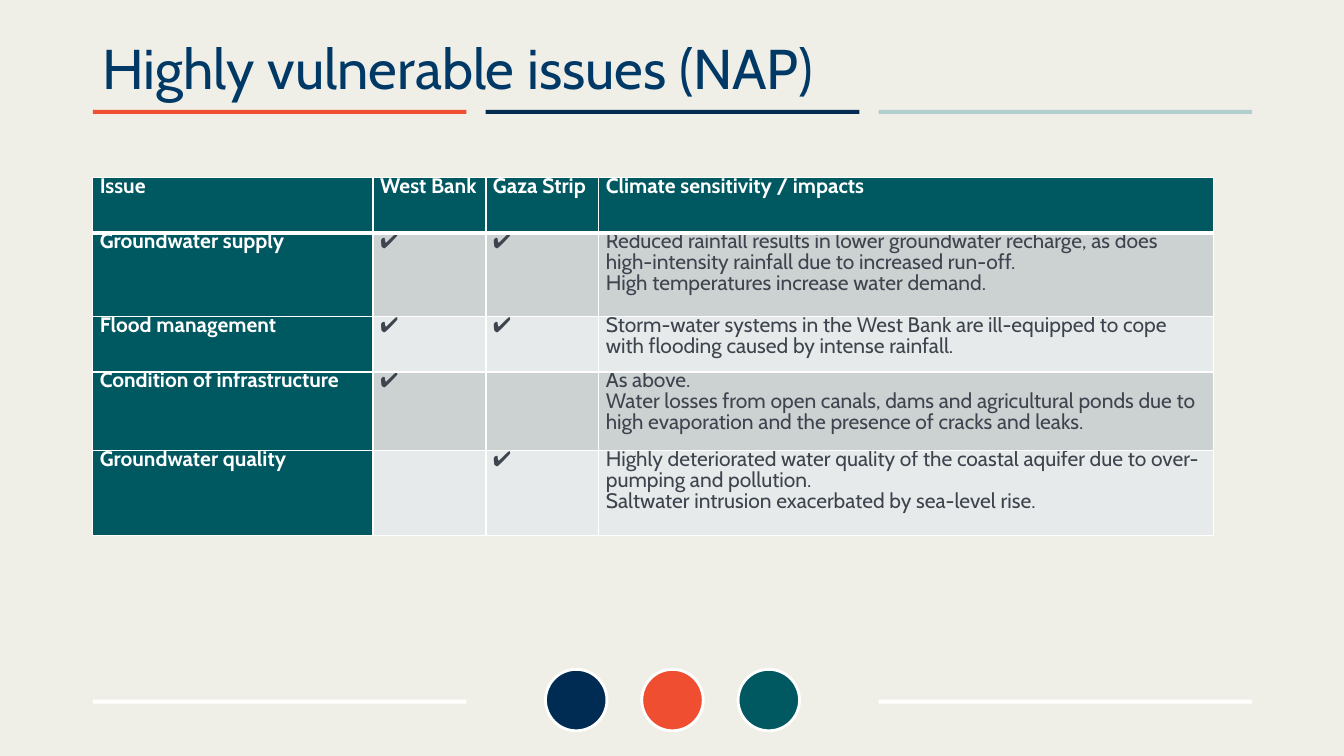
from lxml import etree
from pptx import Presentation
from pptx.dml.color import RGBColor
from pptx.enum.shapes import MSO_SHAPE
from pptx.enum.text import MSO_ANCHOR
from pptx.oxml.ns import qn
from pptx.util import Inches, Pt

RECTANGLE, OVAL = MSO_SHAPE.RECTANGLE, MSO_SHAPE.OVAL
MIDDLE, TOP = MSO_ANCHOR.MIDDLE, MSO_ANCHOR.TOP
FONT = "Cabin"
COLORS = {
    "background": "F0EFE7", "title": "003966", "orange": "F04E30",
    "navy": "002C54", "mint": "B2CFCD", "teal": "005861",
    "white": "FFFFFF", "text": "3D444E", "dark_band": "CCD1D2",
    "light_band": "E7EAEA",
}
TICK = "✔"
COLUMN_WIDTHS = [2.78, 1.12, 1.12, 6.1]
ROW_HEIGHTS = [0.55, 0.83, 0.55, 0.78, 0.84]
ISSUES = [
    ["Issue", "West Bank", "Gaza Strip", "Climate sensitivity / impacts"],
    ["Groundwater supply", TICK, TICK,
     "Reduced rainfall results in lower groundwater recharge, as does "
     "high-intensity rainfall due to increased run-off.\n"
     "High temperatures increase water demand."],
    ["Flood management", TICK, TICK,
     "Storm-water systems in the West Bank are ill-equipped to cope "
     "with flooding caused by intense rainfall."],
    ["Condition of infrastructure", TICK, "",
     "As above.\nWater losses from open canals, dams and agricultural ponds "
     "due to high evaporation and the presence of cracks and leaks."],
    ["Groundwater quality", "", TICK,
     "Highly deteriorated water quality of the coastal aquifer due to "
     "over-pumping and pollution.\n"
     "Saltwater intrusion exacerbated by sea-level rise."],
]


def rgb(name):
    """Return the named palette colour."""
    return RGBColor.from_string(COLORS[name])


def set_format(target, values):
    """Set each attribute in values on target."""
    for attribute, value in values.items():
        setattr(target, attribute, value)


def write_text(frame, text, color, size, spacing, bold=False):
    """Write text into a frame, one paragraph per line."""
    frame.text = text
    for paragraph in frame.paragraphs:
        paragraph.line_spacing = spacing
        set_format(paragraph.font, {"name": FONT, "size": Pt(size), "bold": bold})
        paragraph.font.color.rgb = rgb(color)


def add_ornament(slide, kind, box, color, outline=None):
    """Add a filled shape with an optional outline."""
    ornament = slide.shapes.add_shape(kind, *map(Inches, box))
    ornament.shadow.inherit = False
    ornament.fill.solid()
    ornament.fill.fore_color.rgb = rgb(color)
    if outline:
        ornament.line.color.rgb = rgb(outline)
        ornament.line.width = Pt(2)
    else:
        ornament.line.fill.background()


def add_bars(slide, left, top, width, colors, gap=0.19):
    """Spread thin bars over the width, skipping empty slots."""
    bar_width = (width - gap * (len(colors) - 1)) / len(colors)
    for slot, color in enumerate(colors):
        if color:
            box = (left + slot * (bar_width + gap), top, bar_width, 0.04)
            add_ornament(slide, RECTANGLE, box, color)


def add_header(slide, left, top, width, height):
    """Place the title and the three bars beneath it."""
    add_bars(slide, left, top + 0.98, width, ["orange", "navy", "mint"])
    title = slide.shapes.add_textbox(*map(Inches, (left, top, width, height)))
    set_format(title.text_frame, {"word_wrap": True, "vertical_anchor": MIDDLE})
    write_text(title.text_frame, "Highly vulnerable issues (NAP)", "title", 40, 0.9)


def add_footer(slide, left, top, width):
    """Place the side bars and the three centred circles."""
    diameter, pitch = 0.61, 0.955
    add_bars(slide, left, top + 0.3, width, ["white", None, "white"])
    first = left + width / 2 - pitch - diameter / 2
    for place, color in enumerate(["navy", "orange", "teal"]):
        box = (first + place * pitch, top, diameter, diameter)
        add_ornament(slide, OVAL, box, color, "white")


def add_borders(cell, row):
    """Draw white cell borders, heavier below the heading row."""
    properties = cell._tc.get_or_add_tcPr()
    widths = {"lnL": 1, "lnR": 1, "lnT": 3 if row == 1 else 1,
              "lnB": 3 if row == 0 else 1}
    for side, width in widths.items():
        line = etree.SubElement(properties, qn(f"a:{side}"), w=str(Pt(width)))
        fill = etree.SubElement(line, qn("a:solidFill"))
        etree.SubElement(fill, qn("a:srgbClr"), val=COLORS["white"])


def add_issue_table(slide, left, top):
    """Place the table of issues with its headings and bands."""
    box = (left, top, sum(COLUMN_WIDTHS), sum(ROW_HEIGHTS))
    table = slide.shapes.add_table(len(ISSUES), len(COLUMN_WIDTHS), *map(Inches, box)).table
    set_format(table, {"first_col": True, "horz_banding": True})
    for column, width in zip(table.columns, COLUMN_WIDTHS):
        column.width = Inches(width)
    for row, height in zip(table.rows, ROW_HEIGHTS):
        row.height = Inches(height)
    margins = {"margin_left": Inches(0.07), "margin_right": Inches(0.07),
               "margin_top": 0, "margin_bottom": 0, "vertical_anchor": TOP}
    for row, issue in enumerate(ISSUES):
        band = "dark_band" if row % 2 else "light_band"
        for column, text in enumerate(issue):
            heading = row == 0 or column == 0
            cell = table.cell(row, column)
            set_format(cell, margins)
            add_borders(cell, row)
            cell.fill.solid()
            cell.fill.fore_color.rgb = rgb("teal" if heading else band)
            write_text(cell.text_frame, text, "white" if heading else "text",
                       15, Pt(15), heading)


def main():
    """Build and save the slide."""
    deck = Presentation()
    set_format(deck, {"slide_width": Inches(13.33), "slide_height": Inches(7.5)})
    slide = deck.slides.add_slide(deck.slide_layouts[6])
    slide.background.fill.solid()
    slide.background.fill.fore_color.rgb = rgb("background")
    add_header(slide, 0.92, 0.11, 11.5, 1.2)
    add_footer(slide, 0.92, 6.64, 11.5)
    add_issue_table(slide, 0.92, 1.76)
    deck.save("out.pptx")


if __name__ == "__main__":
    main()
